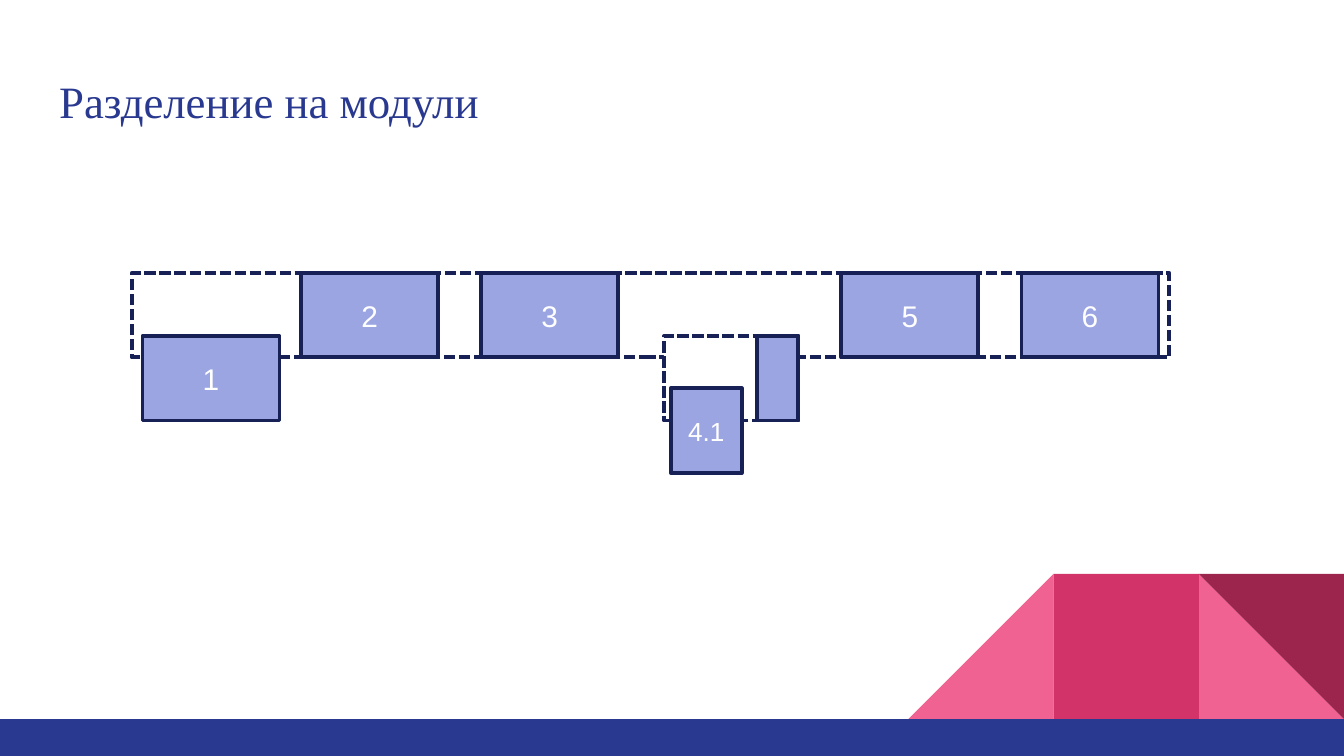
from dataclasses import dataclass
from pptx import Presentation
from pptx.dml.color import RGBColor
from pptx.enum.dml import MSO_LINE
from pptx.enum.shapes import MSO_SHAPE as Shape
from pptx.enum.text import MSO_ANCHOR as Anchor, PP_ALIGN as Align
from pptx.util import Inches, Pt


@dataclass(frozen=True)
class Theme:
    navy: str = "2A3990"
    outline: str = "182156"
    module: str = "9BA5E2"
    white: str = "FFFFFF"
    pink: str = "F06292"
    crimson: str = "D23369"
    wine: str = "9C254D"
    title_font: str = "Times New Roman"
    label_font: str = "Arial"
    title_size: int = 24
    label_size: int = 16
    part_size: int = 14
    line_width: int = 2


theme = Theme()


def add_box(s, kind, left, top, width, height, fill=None, line=None, dashed=False):
    sp = s.shapes.add_shape(kind, Inches(left), Inches(top), Inches(width), Inches(height))
    sp.shadow.inherit = False
    if fill:
        sp.fill.solid()
        sp.fill.fore_color.rgb = RGBColor.from_string(fill)
    else:
        sp.fill.background()
    if line:
        sp.line.color.rgb = RGBColor.from_string(line)
        sp.line.width = Pt(theme.line_width)
        if dashed:
            sp.line.dash_style = MSO_LINE.SQUARE_DOT
    else:
        sp.line.fill.background()
    return sp


def add_run(p, text, font, size, color):
    r = p.add_run()
    r.text = text
    r.font.name = font
    r.font.size = Pt(size)
    r.font.color.rgb = RGBColor.from_string(color)


prs = Presentation()
prs.slide_width = Inches(10)
prs.slide_height = Inches(10 * 9 / 16)
s = prs.slides.add_slide(prs.slide_layouts[5])

tile, tile_top = 1.08, 4.27
tiles = [
    (Shape.RIGHT_TRIANGLE, 8.92, theme.pink, 0, False),
    (Shape.RIGHT_TRIANGLE, 6.76, theme.pink, 0, True),
    (Shape.RECTANGLE, 7.84, theme.crimson, 0, False),
    (Shape.RIGHT_TRIANGLE, 8.92, theme.wine, 180, False),
]
for kind, left, color, angle, flipped in tiles:
    sp = add_box(s, kind, left, tile_top, tile, tile, color)
    sp.rotation = angle
    if flipped:
        sp._element.spPr.xfrm.set("flipH", "1")
add_box(s, Shape.RECTANGLE, 0, 5.35, 10, 0.28, theme.navy)

title = s.shapes.title
title.left, title.top = Inches(0.34), Inches(0.45)
title.width, title.height = Inches(9.32), Inches(0.66)
tf = title.text_frame
tf.margin_left = tf.margin_right = tf.margin_top = tf.margin_bottom = Inches(0.1)
tf.vertical_anchor = Anchor.TOP
p = tf.paragraphs[0]
p.alignment = Align.LEFT
add_run(p, "Разделение на модули", theme.title_font, theme.title_size, theme.navy)

row_top, lower_top, part_top = 2.03, 2.5, 2.89
module_width, module_height = 1.02, 0.63
first_left, pitch = 2.24, 1.34

add_box(s, Shape.RECTANGLE, 0.98, row_top, 7.72, module_height,
        line=theme.outline, dashed=True)
add_box(s, Shape.RECTANGLE, 4.94, lower_top, 1, module_height,
        theme.white, theme.outline, dashed=True)
add_box(s, Shape.RECTANGLE, 5.63, lower_top, 0.31, module_height,
        theme.module, theme.outline)

modules = [(str(n), first_left + (n - 2) * pitch, row_top, module_width, theme.label_size)
           for n in (2, 3, 5, 6)]
modules += [
    ("1", 1.06, lower_top, module_width, theme.label_size),
    ("4.1", 4.99, part_top, 0.53, theme.part_size),
]
for label, left, top, width, size in modules:
    sp = add_box(s, Shape.RECTANGLE, left, top, width, module_height,
                 theme.module, theme.outline)
    tf = sp.text_frame
    tf.vertical_anchor = Anchor.MIDDLE
    p = tf.paragraphs[0]
    p.alignment = Align.CENTER
    add_run(p, label, theme.label_font, size, theme.white)

prs.save("out.pptx")
